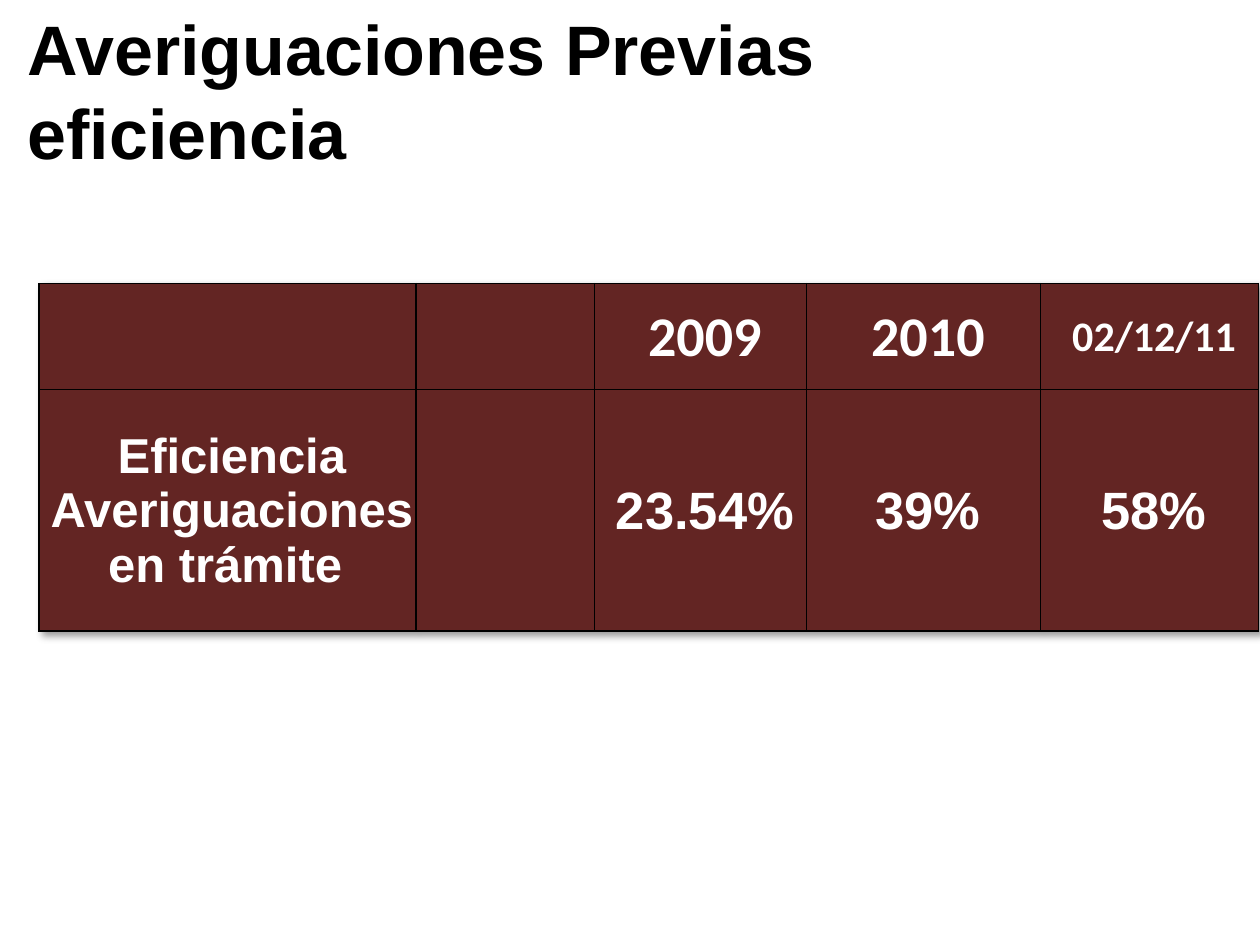
import pptx
import pptx.dml.color
import pptx.enum.text
import pptx.oxml
import pptx.util

Pt = pptx.util.Pt
RGBColor = pptx.dml.color.RGBColor
PP_ALIGN = pptx.enum.text.PP_ALIGN
MSO_ANCHOR = pptx.enum.text.MSO_ANCHOR

BLACK = RGBColor(0x00, 0x00, 0x00)
WHITE = RGBColor(0xFF, 0xFF, 0xFF)
MAROON = RGBColor(0x63, 0x25, 0x23)

NAMESPACE = 'xmlns:a="http://schemas.openxmlformats.org/drawingml/2006/main"'
COLUMN_WIDTHS = [215.3, 102.2, 121, 133.9, 124.6]
ROW_HEIGHTS = [60.5, 138.2]
ROWS = [
    [None, None, ("2009", 32, "Calibri"), ("2010", 32, "Calibri"),
     ("02/12/11", 24, "Calibri")],
    [("Eficiencia\nAveriguaciones en trámite ", 28, "Arial"), None,
     ("23.54%", 30, "Arial"), ("39%", 30, "Arial"), ("58%", 30, "Arial")],
]


def format_text(frame, size, font_name, color, alignment):
    for para in frame.paragraphs:
        para.alignment = alignment
        for span in para.runs:
            span.font.size = Pt(size)
            span.font.name = font_name
            span.font.bold = True
            span.font.color.rgb = color


def set_title(page, text):
    box = page.shapes.title
    box.left, box.top, box.width, box.height = Pt(8.6), Pt(-2), Pt(626.4), Pt(61)
    frame = box.text_frame
    frame.text = text
    frame.word_wrap = True
    frame.auto_size = pptx.enum.text.MSO_AUTO_SIZE.NONE
    frame.vertical_anchor = MSO_ANCHOR.TOP
    frame.margin_top = Pt(5)
    format_text(frame, 40, "Arial", BLACK, PP_ALIGN.LEFT)
    for para in frame.paragraphs:
        para.line_spacing = Pt(48)
        para.space_before = Pt(0)


def set_borders(cell, color, width):
    properties = cell._tc.get_or_add_tcPr()
    for position, side in enumerate(("lnL", "lnR", "lnT", "lnB")):
        border = pptx.oxml.parse_xml(
            f'<a:{side} {NAMESPACE} w="{Pt(width)}"><a:solidFill>'
            f'<a:srgbClr val="{color}"/></a:solidFill></a:{side}>')
        properties.insert(position, border)


def add_table_shadow(table):
    shadow = pptx.oxml.parse_xml(
        f'<a:effectLst {NAMESPACE}><a:outerShdw blurRad="{Pt(4)}" '
        f'dist="{Pt(3)}" dir="2700000" algn="tl" rotWithShape="0">'
        '<a:srgbClr val="000000"><a:alpha val="40000"/></a:srgbClr>'
        '</a:outerShdw></a:effectLst>')
    table._tbl.tblPr.insert(0, shadow)


def fill_cell(cell, content):
    cell.fill.solid()
    cell.fill.fore_color.rgb = MAROON
    set_borders(cell, BLACK, 1)
    if content is None:
        return
    text, size, font_name = content
    cell.vertical_anchor = MSO_ANCHOR.MIDDLE
    cell.margin_left, cell.margin_right = Pt(5.8), Pt(0.7)
    cell.margin_top, cell.margin_bottom = Pt(0.7), Pt(0)
    cell.text_frame.text = text
    format_text(cell.text_frame, size, font_name, WHITE, PP_ALIGN.CENTER)


def add_efficiency_table(page):
    table = page.shapes.add_table(
        len(ROWS), len(COLUMN_WIDTHS), Pt(22.3), Pt(162),
        Pt(sum(COLUMN_WIDTHS)), Pt(sum(ROW_HEIGHTS))).table
    table.first_row = False
    table.horz_banding = False
    for column, width in zip(table.columns, COLUMN_WIDTHS):
        column.width = Pt(width)
    for row, height, contents in zip(table.rows, ROW_HEIGHTS, ROWS):
        row.height = Pt(height)
        for cell, content in zip(row.cells, contents):
            fill_cell(cell, content)
    add_table_shadow(table)


def main():
    deck = pptx.Presentation()
    deck.slide_width, deck.slide_height = Pt(720), Pt(540)
    page = deck.slides.add_slide(deck.slide_layouts[5])
    set_title(page, "Averiguaciones Previas\neficiencia")
    add_efficiency_table(page)
    deck.save("out.pptx")


if __name__ == "__main__":
    main()
